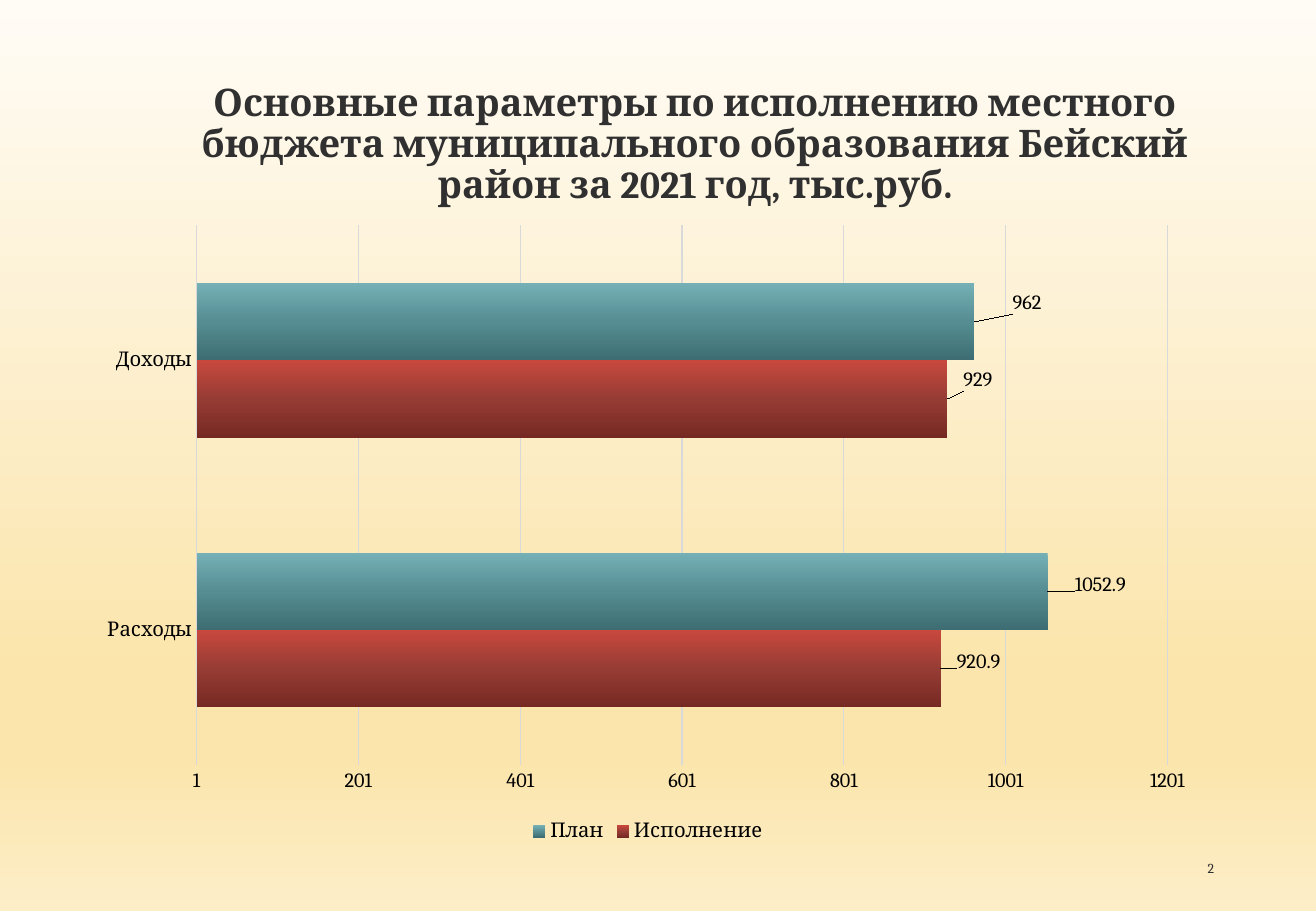
from typing import NamedTuple

from lxml import etree
from pptx import Presentation
from pptx.chart.data import CategoryChartData
from pptx.dml.color import RGBColor
from pptx.enum.chart import XL_CHART_TYPE, XL_LABEL_POSITION, XL_LEGEND_POSITION, XL_TICK_MARK
from pptx.enum.text import MSO_ANCHOR, PP_ALIGN
from pptx.oxml import parse_xml
from pptx.oxml.ns import nsdecls, qn
from pptx.util import Cm, Pt

BAR_CLUSTERED = XL_CHART_TYPE.BAR_CLUSTERED
OUTSIDE_END = XL_LABEL_POSITION.OUTSIDE_END
LEGEND_BOTTOM = XL_LEGEND_POSITION.BOTTOM
NO_TICK = XL_TICK_MARK.NONE
BOTTOM, MIDDLE = MSO_ANCHOR.BOTTOM, MSO_ANCHOR.MIDDLE
CENTER, RIGHT = PP_ALIGN.CENTER, PP_ALIGN.RIGHT

FONT = "Cambria"
TEXT, BLACK, GRID = "303030", "000000", "D9D9D9"


class Area(NamedTuple):
    """Left, top, width and height in centimetres."""
    left: float
    top: float
    width: float
    height: float

    def lengths(self) -> list:
        return [Cm(value) for value in self]


class BudgetSeries(NamedTuple):
    name: str
    values: tuple
    stops: tuple
    label_shifts: tuple  # fractions of the chart's width and height


CATEGORIES = ("Расходы", "Доходы")
BUDGET = (
    BudgetSeries("Исполнение", (920.9, 929),
                 ((0, "C8483E"), (50, "963C34"), (100, "762923")),
                 ((0.01, -0.01), (0.01, -0.03))),
    BudgetSeries("План", (1052.9, 962),
                 ((0, "75B0B6"), (50, "558D92"), (100, "3D6D72")),
                 ((0.02, -0.01), (0.03, -0.03))),
)
BACKGROUND = ((0, "FFFCF6"), (74, "FBE5AC"), (83, "FBE5AC"), (100, "FDEEC8"))


def color(value: str) -> RGBColor:
    return RGBColor.from_string(value)


def set_font(font, size: float, fill: str, bold: bool = False) -> None:
    font.name, font.size, font.bold = FONT, Pt(size), bold
    font.color.rgb = color(fill)


def set_line(line, fill: str) -> None:
    line.color.rgb = color(fill)
    line.width = Pt(0.75)


def set_gradient(fill, owner, stops: tuple) -> None:
    """Fill from top to bottom with any number of stops."""
    fill.gradient()
    fill.gradient_angle = 270
    stop_list = owner.find(".//" + qn("a:gsLst"))
    for old_stop in list(stop_list):
        stop_list.remove(old_stop)
    for percent, value in stops:
        stop = etree.SubElement(stop_list, qn("a:gs"), pos=str(percent * 1000))
        etree.SubElement(stop, qn("a:srgbClr"), val=value)


def add_text(page, text: str, area: Area, *, size: float, align, anchor,
             bold: bool = False, spacing: float = 1.0) -> None:
    box = page.shapes.add_textbox(*area.lengths())
    frame = box.text_frame
    frame.word_wrap = True
    frame.vertical_anchor = anchor
    para = frame.paragraphs[0]
    para.alignment, para.line_spacing = align, spacing
    span = para.add_run()
    span.text = text
    set_font(span.font, size, TEXT, bold)


def manual_layout(x: float, y: float, extra: str = "", target: str = ""):
    return parse_xml(
        f'<c:layout {nsdecls("c")}><c:manualLayout>{target}'
        f'<c:xMode val="edge"/><c:yMode val="edge"/><c:x val="{x}"/><c:y val="{y}"/>{extra}'
        '</c:manualLayout></c:layout>')


def label_layout(x: float, y: float):
    return parse_xml(
        f'<c:layout {nsdecls("c")}><c:manualLayout><c:x val="{x}"/><c:y val="{y}"/>'
        '</c:manualLayout></c:layout>')


def place_plot(chart) -> None:
    plot_area = chart.element.find(".//" + qn("c:plotArea"))
    for old_layout in plot_area.findall(qn("c:layout")):
        plot_area.remove(old_layout)
    plot_area.insert(0, manual_layout(
        0.1, 0.02, '<c:w val="0.86"/><c:h val="0.85"/>', '<c:layoutTarget val="inner"/>'))


def style_series(series, budget: BudgetSeries) -> None:
    set_gradient(series.format.fill, series._element, budget.stops)
    labels = series.data_labels
    labels.show_value = True
    labels.position = OUTSIDE_END
    set_font(labels.font, 12, BLACK)
    for index, shift in enumerate(budget.label_shifts):
        label = series.points[index].data_label
        label.position = OUTSIDE_END
        set_font(label.font, 12, BLACK)
    for element, shift in zip(series._element.iter(qn("c:dLbl")), budget.label_shifts):
        element.insert(1, label_layout(*shift))


def style_axes(chart) -> None:
    for axis in (chart.category_axis, chart.value_axis):
        axis.major_tick_mark = axis.minor_tick_mark = NO_TICK
        set_font(axis.tick_labels.font, 12, BLACK)
    set_line(chart.category_axis.format.line, GRID)
    values = chart.value_axis
    values.minimum_scale, values.maximum_scale, values.major_unit = 1, 1201, 200
    values.format.line.fill.background()
    values.has_major_gridlines = True
    set_line(values.major_gridlines.format.line, GRID)


def add_budget_chart(page, area: Area) -> None:
    data = CategoryChartData()
    data.categories = CATEGORIES
    for budget in BUDGET:
        data.add_series(budget.name, budget.values)
    chart = page.shapes.add_chart(BAR_CLUSTERED, *area.lengths(), data).chart
    chart.has_title = False
    set_font(chart.font, 10, TEXT)
    chart.has_legend = True
    chart.legend.position = LEGEND_BOTTOM
    chart.legend.include_in_layout = False
    set_font(chart.legend.font, 12, BLACK)
    plot = chart.plots[0]
    plot.gap_width, plot.overlap, plot.vary_by_categories = 150, 0, False
    for series, budget in zip(plot.series, BUDGET):
        style_series(series, budget)
    style_axes(chart)
    place_plot(chart)


def main() -> None:
    deck = Presentation()
    deck.slide_width, deck.slide_height = Cm(27.51), Cm(19.05)
    page = deck.slides.add_slide(deck.slide_layouts[6])
    set_gradient(page.background.fill, page.element, BACKGROUND)

    # Title
    add_text(page, "Основные параметры по исполнению местного бюджета муниципального "
             "образования Бейский район за 2021 год, тыс.руб.",
             Area(3.43, 1.07, 22.2, 3.38), size=22.5, align=CENTER, anchor=BOTTOM,
             bold=True, spacing=0.9)

    # Planned and actual budget
    add_budget_chart(page, Area(1.75, 4.45, 23.6, 13.28))

    # Page number
    add_text(page, "2", Area(23.22, 17.78, 2.41, 0.76), size=8.2, align=RIGHT, anchor=MIDDLE)

    deck.save("out.pptx")


if __name__ == "__main__":
    main()
